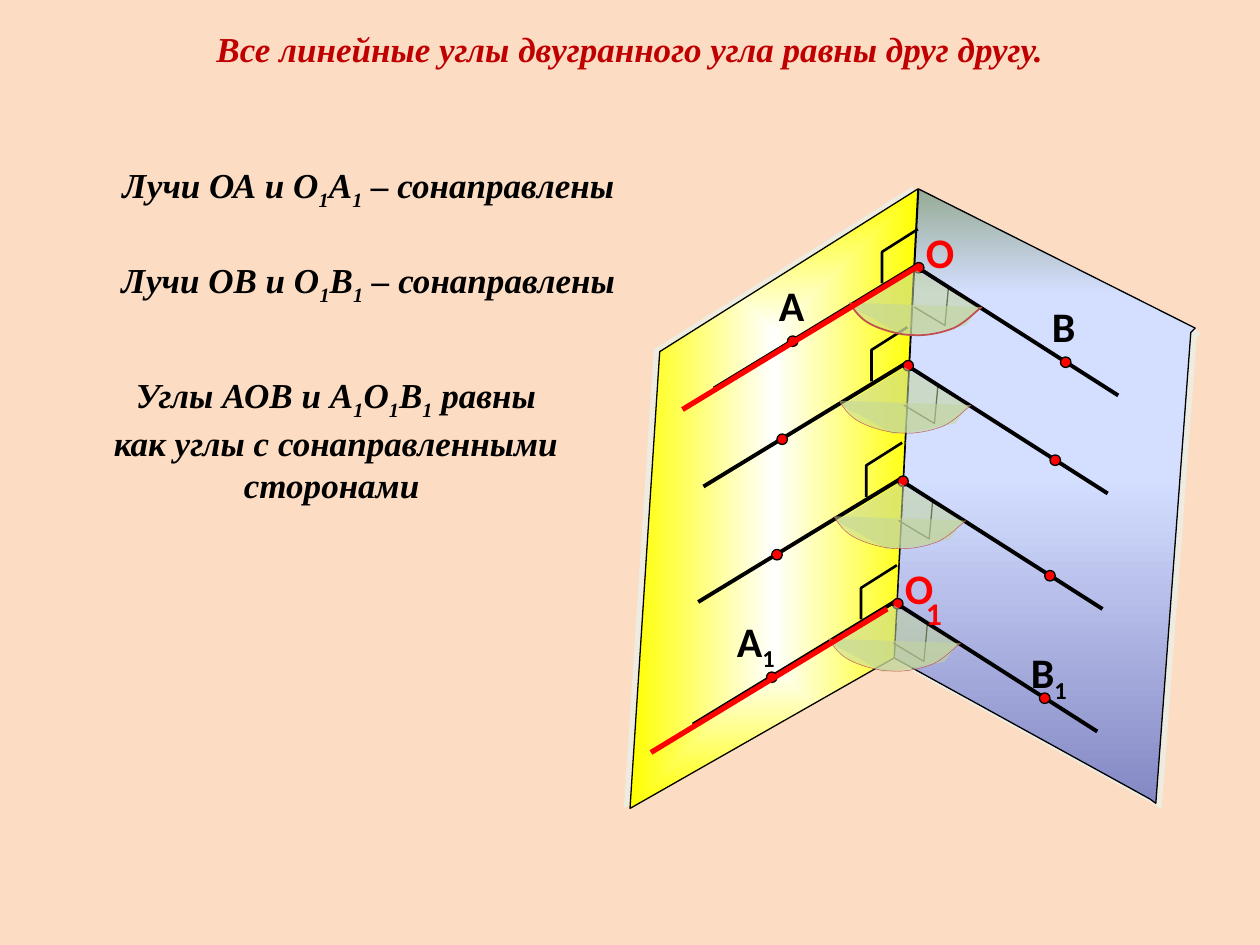
import pptx
import pptx.dml.color
import pptx.enum.shapes
import pptx.enum.text
import pptx.oxml
import pptx.oxml.ns
import pptx.util
from lxml import etree

Pt = pptx.util.Pt
qn = pptx.oxml.ns.qn
COLORS = {
    "background": "FCDDC3", "ink": "000000", "title": "C00000", "red": "FF0000",
    "sector": "C3D69B", "arc": "C0504D", "halo": "EEECE1", "yellow": "FFFF00",
    "white": "FFFFFF", "violet": "8488C4", "sky": "D4DEFF", "sage": "96AB94",
}


class Drawing:
    """Draws styled geometry and text on the current slide."""

    def __init__(self, slide):
        self.slide = slide
        background = slide.background.fill
        background.solid()
        background.fore_color.rgb = self.rgb("background")

    def rgb(self, color):
        return pptx.dml.color.RGBColor.from_string(COLORS[color])

    def paint(self, shape, fill, line, width, alpha=None):
        shape.shadow.inherit = False
        if fill:
            shape.fill.solid()
            shape.fill.fore_color.rgb = self.rgb(fill)
            if alpha:
                color = shape.fill._xPr.find(".//" + qn("a:srgbClr"))
                etree.SubElement(color, qn("a:alpha")).set("val", str(alpha * 1000))
        else:
            shape.fill.background()
        if line:
            shape.line.color.rgb = self.rgb(line)
            shape.line.width = Pt(width)
        else:
            shape.line.fill.background()

    def outline(self, points, fill=None, line="ink", width=0.75, closed=False, alpha=None):
        corners = [(Pt(x), Pt(y)) for x, y in points]
        builder = self.slide.shapes.build_freeform(*corners[0])
        builder.add_line_segments(corners[1:], close=closed)
        shape = builder.convert_to_shape()
        self.paint(shape, fill, line, width, alpha)
        return shape

    def plane(self, points, stops, direction, shadow_distance, shadow_angle):
        face = self.outline(points, fill="white", closed=True)
        properties = face._element.spPr
        gradient = pptx.oxml.parse_xml(
            f'<a:gradFill {pptx.oxml.ns.nsdecls("a")} rotWithShape="1"><a:gsLst>'
            + "".join(f'<a:gs pos="{place * 1000}"><a:srgbClr val="{COLORS[color]}"/></a:gs>'
                      for place, color in stops)
            + f"</a:gsLst>{direction}</a:gradFill>")
        properties.replace(properties.find(qn("a:solidFill")), gradient)
        halo = etree.SubElement(properties.find(qn("a:effectLst")), qn("a:outerShdw"))
        halo.set("dist", str(Pt(shadow_distance)))
        halo.set("dir", str(shadow_angle * 60000))
        halo.set("algn", "ctr")
        halo.set("rotWithShape", "0")
        etree.SubElement(halo, qn("a:srgbClr")).set("val", COLORS["halo"])

    def ray(self, start, end, color="ink", width=2.25):
        ends = [Pt(value) for value in (*start, *end)]
        segment = self.slide.shapes.add_connector(
            pptx.enum.shapes.MSO_CONNECTOR.STRAIGHT, *ends)
        segment.line.color.rgb = self.rgb(color)
        segment.line.width = Pt(width)
        etree.SubElement(segment._element.spPr, qn("a:effectLst"))

    def dot(self, x, y, size=6):
        point = self.slide.shapes.add_shape(
            pptx.enum.shapes.MSO_SHAPE.OVAL,
            Pt(x - size / 2), Pt(y - size / 2), Pt(size), Pt(size))
        self.paint(point, "red", "ink", 0.75)

    def text(self, box, lines, color="ink", size=20, font="Times New Roman",
             italic=True, align="CENTER"):
        frame = self.slide.shapes.add_textbox(*[Pt(value) for value in box]).text_frame
        frame.word_wrap = True
        for number, line in enumerate(lines):
            paragraph = frame.add_paragraph() if number else frame.paragraphs[0]
            paragraph.alignment = getattr(pptx.enum.text.PP_ALIGN, align)
            style = paragraph.font
            style.name, style.size = font, Pt(size)
            style.bold, style.italic = True, italic
            style.color.rgb = self.rgb(color)
            for part, words in enumerate(line.split("|")):
                if words:
                    run = paragraph.add_run()
                    run.text = words
                    if part % 2:
                        run._r.get_or_add_rPr().set("baseline", "-25000")

    def label(self, x, y, letter, color="ink", size=24, width=54):
        self.text((x, y, width, 36), [letter], color, size, "Calibri", False, "LEFT")


def shifted(origin, offsets):
    return [(origin[0] + dx, origin[1] + dy) for dx, dy in offsets]


def curve(points, steps=8):
    smooth = [points[0]]
    for first in range(0, len(points) - 1, 3):
        controls = points[first:first + 4]
        for step in range(1, steps + 1):
            t = step / steps
            weights = ((1 - t) ** 3, 3 * t * (1 - t) ** 2, 3 * t * t * (1 - t), t ** 3)
            smooth.append(tuple(sum(w * c[axis] for w, c in zip(weights, controls))
                                for axis in (0, 1)))
    return smooth


APEXES = [(523, 152), (517, 208), (514, 274), (511, 344)]
LEFT_RAY, RIGHT_RAY = (-115, 70), (116, 74)
LEFT_SQUARE = [(1.5, -21), (-19, -8), (-19, 10)]
RIGHT_SQUARE = [(-0.5, 23.5), (17, 34), (19, 12)]
DOTS = [(-70, 43), (86, 55), (2, 1)]
SECTOR = [(36, 24), (0, 2), (-36, 24), (-24, 30), (-7, 40), (8, 38), (29, 34), (36, 24)]
ARC = curve([(-37.5, 21), (-34.5, 26), (-31, 30.5), (-25, 33.5), (-19, 36.5), (-9, 39.5),
             (-1, 39.5), (7, 40), (15.5, 38), (22, 35.5), (28.5, 32.5), (34.5, 26), (38, 23.5)])


def main():
    deck = pptx.Presentation()
    deck.slide_width, deck.slide_height = Pt(720), Pt(540)
    drawing = Drawing(deck.slides.add_slide(deck.slide_layouts[6]))

    drawing.plane(
        [(657, 456.5), (511, 376), (525, 108), (683, 187.5), (680.5, 190), (660.5, 459)],
        [(0, "violet"), (53, "sky"), (83, "sky"), (100, "sage")],
        '<a:lin ang="16200000" scaled="0"/>', 4.2, 45)
    drawing.plane(
        [(360, 462), (511, 376), (524.5, 108), (377, 201)],
        [(0, "white"), (100, "yellow")],
        '<a:path path="rect"><a:fillToRect l="50000" t="50000" r="50000" b="50000"/></a:path>',
        3.2, 198)
    drawing.text((12, 12, 696, 32),
                 ["Все линейные углы двугранного угла равны друг другу."], "title")

    for apex in APEXES:
        for end in shifted(apex, [LEFT_RAY, RIGHT_RAY]):
            drawing.ray(apex, end)
        drawing.outline(shifted(apex, LEFT_SQUARE), width=1.5)
        drawing.outline(shifted(apex, RIGHT_SQUARE))
        for center in shifted(apex, DOTS):
            drawing.dot(*center)

    for x, y, letter, color in [
        (438, 156, "А", "ink"), (594, 168, "В", "ink"), (522, 126, "O", "red"),
        (414, 348, "А|1|", "ink"), (582, 366, "В|1|", "ink"), (510, 318, "O", "red"),
    ]:
        drawing.label(x, y, letter, color)

    for apex in reversed(APEXES):
        drawing.outline(shifted(apex, SECTOR), "sector", None, closed=True, alpha=54)
        drawing.outline(shifted(apex, ARC), "sector", "arc",
                        1 if apex == APEXES[0] else 0.25, alpha=54)

    for start in [(525, 152), (507, 348)]:
        drawing.ray(start, (start[0] - 135, start[1] + 82), "red", 3)
    drawing.label(522, 336, "1", "red", 18, 24.5)

    for top, letter in [(90, "А"), (144, "В")]:
        drawing.text((12, top, 402, 32),
                     [f"Лучи О{letter} и О|1|{letter}|1| – сонаправлены "])
    drawing.text((12, 210, 360, 80),
                 ["Углы АОВ и А|1|О|1|В|1| равны", "как углы с сонаправленными сторонами "])
    deck.save("out.pptx")


if __name__ == "__main__":
    main()
